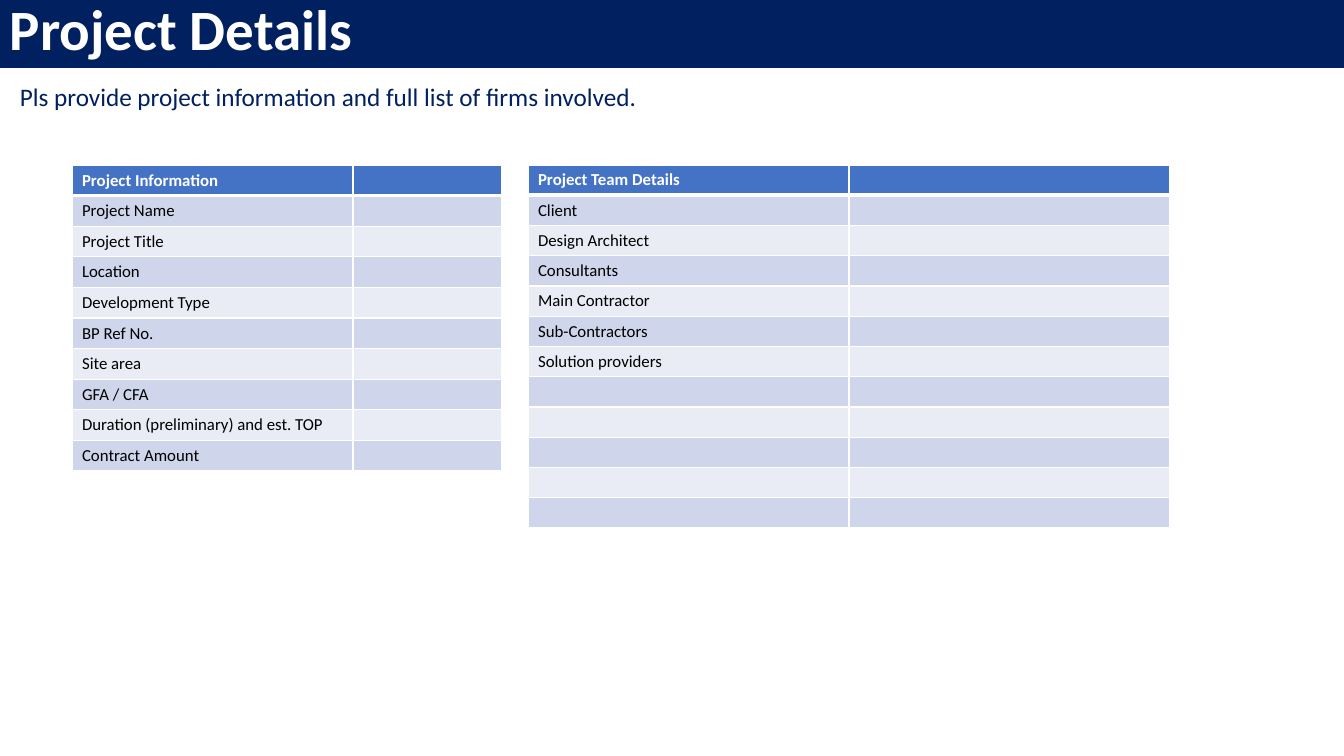
from collections import namedtuple
from dataclasses import dataclass

from lxml import etree
from pptx import Presentation
from pptx.dml.color import RGBColor
from pptx.enum.shapes import MSO_SHAPE
from pptx.enum.text import MSO_ANCHOR, PP_ALIGN
from pptx.oxml.ns import qn
from pptx.util import Emu, Pt

RECTANGLE = MSO_SHAPE.RECTANGLE
MIDDLE = MSO_ANCHOR.MIDDLE
LEFT = PP_ALIGN.LEFT
EMU_PER_PX = 914400 / 100.8
BLANK_LAYOUT = 6

Box = namedtuple("Box", "left top width height")


@dataclass(frozen=True)
class Theme:
    font: str = "Calibri"
    navy: str = "002060"
    white: str = "FFFFFF"
    black: str = "000000"
    header: str = "4472C4"
    bands: tuple = ("CFD5EA", "E9EBF5")
    title_size: float = 40.7
    note_size: int = 18
    cell_size: int = 12
    border: int = 1
    header_border: int = 3


THEME = Theme()

PROJECT_INFORMATION = [
    "Project Information", "Project Name", "Project Title", "Location",
    "Development Type", "BP Ref No.", "Site area", "GFA / CFA",
    "Duration (preliminary) and est. TOP", "Contract Amount",
]
PROJECT_TEAM = [
    "Project Team Details", "Client", "Design Architect", "Consultants",
    "Main Contractor", "Sub-Contractors", "Solution providers",
] + [""] * 5


def px(length):
    return Emu(round(length * EMU_PER_PX))


def place(box):
    return [px(length) for length in box]


def write(frame, text, size, color, bold=False):
    para = frame.paragraphs[0]
    para.alignment = LEFT
    para.font.name = THEME.font
    para.font.size = Pt(size)
    para.font.bold = bold
    para.font.color.rgb = RGBColor.from_string(color)
    if text:
        para.add_run().text = text
    return para


def add_title_bar(slide, box, text):
    bar = slide.shapes.add_shape(RECTANGLE, *place(box))
    bar.shadow.inherit = False
    bar.fill.solid()
    bar.fill.fore_color.rgb = RGBColor.from_string(THEME.navy)
    bar.line.fill.background()
    bar.text_frame.vertical_anchor = MIDDLE
    para = write(bar.text_frame, text, THEME.title_size, THEME.white, True)
    para.line_spacing = 0.8


def add_note(slide, box, text):
    frame = slide.shapes.add_textbox(*place(box)).text_frame
    frame.word_wrap = True
    write(frame, text, THEME.note_size, THEME.navy)


def add_borders(cell, top, bottom):
    properties = cell._tc.get_or_add_tcPr()
    widths = {"a:lnL": THEME.border, "a:lnR": THEME.border, "a:lnT": top, "a:lnB": bottom}
    for position, (tag, width) in enumerate(widths.items()):
        line = etree.Element(qn(tag), w=str(Pt(width)))
        fill = etree.SubElement(line, qn("a:solidFill"))
        etree.SubElement(fill, qn("a:srgbClr"), val=THEME.white)
        properties.insert(position, line)


def style_cell(cell, row, text):
    is_header = row == 0
    fill = THEME.header if is_header else THEME.bands[(row - 1) % 2]
    cell.fill.solid()
    cell.fill.fore_color.rgb = RGBColor.from_string(fill)
    cell.vertical_anchor = MIDDLE
    cell.margin_top = cell.margin_bottom = 0
    color = THEME.white if is_header else THEME.black
    write(cell.text_frame, text, THEME.cell_size, color, is_header)
    top = THEME.header_border if row == 1 else THEME.border
    bottom = THEME.header_border if is_header else THEME.border
    add_borders(cell, top, bottom)


def add_form_table(slide, box, label_width, labels):
    table = slide.shapes.add_table(len(labels), 2, *place(box)).table
    table.columns[0].width = px(label_width)
    table.columns[1].width = px(box.width - label_width)
    for row, label in enumerate(labels):
        table.rows[row].height = px(box.height / len(labels))
        style_cell(table.cell(row, 0), row, label)
        style_cell(table.cell(row, 1), row, "")


def build_project_details(deck, box):
    slide = deck.slides.add_slide(deck.slide_layouts[BLANK_LAYOUT])
    left, top = box.left, box.top
    add_title_bar(slide, Box(left, top, box.width, 68), "Project Details")
    add_form_table(slide, Box(left + 72, top + 165, 430, 306), 281, PROJECT_INFORMATION)
    add_note(slide, Box(left + 10, top + 76, 1308, 40),
             "Pls provide project information and full list of firms involved.")
    add_form_table(slide, Box(left + 528, top + 165, 642, 363), 321, PROJECT_TEAM)


def main():
    page = Box(0, 0, 1344, 756)
    deck = Presentation()
    deck.slide_width = px(page.width)
    deck.slide_height = px(page.height)
    build_project_details(deck, page)
    deck.save("out.pptx")


if __name__ == "__main__":
    main()
